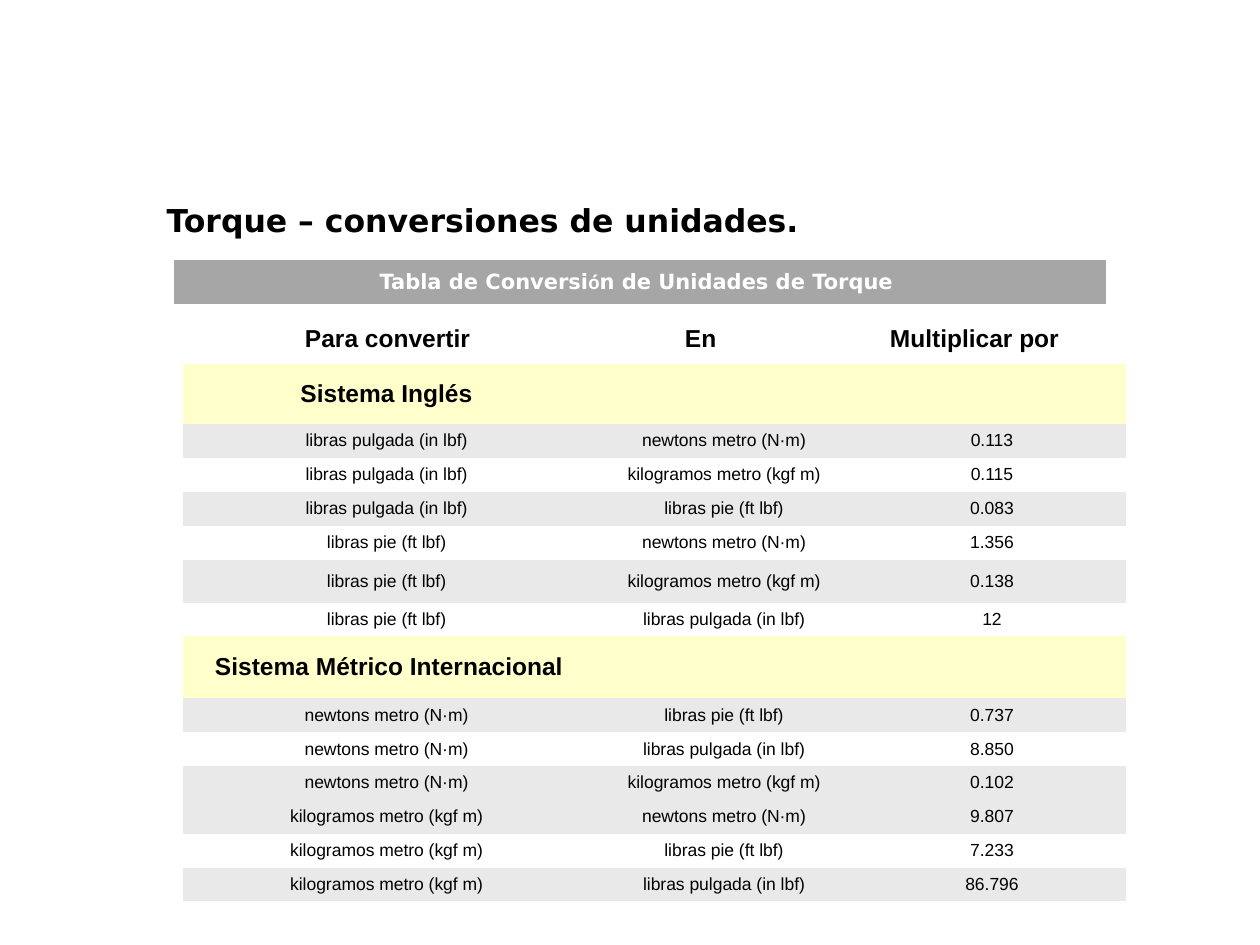
from pptx import Presentation
from pptx.dml.color import RGBColor
from pptx.enum.text import MSO_ANCHOR, MSO_AUTO_SIZE, PP_ALIGN
from pptx.util import Pt

PX = 914400 // 126
BLACK = RGBColor(0x00, 0x00, 0x00)
WHITE = RGBColor(0xFF, 0xFF, 0xFF)
GREY = RGBColor(0xA6, 0xA6, 0xA6)
LIGHT = RGBColor(0xE9, 0xE9, 0xE9)
YELLOW = RGBColor(0xFF, 0xFF, 0xCC)
PLAIN_STYLE = "{2D5ABB26-0587-4C30-8999-92F81FD0307C}"

IN_LBF = "libras pulgada (in lbf)"
FT_LBF = "libras pie (ft lbf)"
NM = "newtons metro (N·m)"
KGF_M = "kilogramos metro (kgf m)"

HEADINGS = [("Para convertir", 122), ("En", 95), ("Multiplicar por", 32)]
ENGLISH = [
    (IN_LBF, NM, "0.113", LIGHT),
    (IN_LBF, KGF_M, "0.115", None),
    (IN_LBF, FT_LBF, "0.083", LIGHT),
    (FT_LBF, NM, "1.356", None),
    (FT_LBF, KGF_M, "0.138", LIGHT),
    (FT_LBF, IN_LBF, "12", None),
]
METRIC = [
    (NM, FT_LBF, "0.737", LIGHT),
    (NM, IN_LBF, "8.850", None),
    (NM, KGF_M, "0.102", LIGHT),
    (KGF_M, NM, "9.807", LIGHT),
    (KGF_M, FT_LBF, "7.233", None),
    (KGF_M, IN_LBF, "86.796", LIGHT),
]
COLUMNS = [407, 268, 268]
ROWS = [50, 60, 34, 33, 34, 34, 43, 33, 62, 34, 34, 33, 34, 34, 33]


def set_font(p, name, size, color, bold):
    p.font.name = name
    p.font.size = Pt(size)
    p.font.color.rgb = color
    p.font.bold = bold


def fill_cell(cell, color):
    cell.vertical_anchor = MSO_ANCHOR.MIDDLE
    if color is None:
        cell.fill.background()
    else:
        cell.fill.solid()
        cell.fill.fore_color.rgb = color


def write_cell(cell, text, size, bold, indent=None):
    p = cell.text_frame.paragraphs[0]
    p.text = text
    set_font(p, "Arial", size, BLACK, bold)
    if indent is None:
        p.alignment = PP_ALIGN.CENTER
    else:
        p.alignment = PP_ALIGN.LEFT
        cell.margin_left = indent * PX


def add_plain_table(s, x, y, columns, rows):
    frame = s.shapes.add_table(len(rows), len(columns), x * PX, y * PX,
                               sum(columns) * PX, sum(rows) * PX)
    table = frame.table
    table.first_row = False
    table.horz_banding = False
    table._tbl.tblPr.find("{*}tableStyleId").text = PLAIN_STYLE
    for column, width in zip(table.columns, columns):
        column.width = width * PX
    for row, height in zip(table.rows, rows):
        row.height = height * PX
    return table


def add_title(s, x, y, w, h):
    title = s.shapes.title
    title.left, title.top, title.width, title.height = (v * PX for v in (x, y, w, h))
    tf = title.text_frame
    tf.word_wrap = True
    tf.auto_size = MSO_AUTO_SIZE.SHAPE_TO_FIT_TEXT
    tf.vertical_anchor = MSO_ANCHOR.TOP
    p = tf.paragraphs[0]
    p.text = "Torque – conversiones de unidades."
    p.alignment = PP_ALIGN.LEFT
    set_font(p, "DejaVu Sans", 18, BLACK, True)


def add_banner(s, x, y, w, h):
    cell = add_plain_table(s, x, y, [w], [h]).cell(0, 0)
    fill_cell(cell, GREY)
    p = cell.text_frame.paragraphs[0]
    p.alignment = PP_ALIGN.CENTER
    for text, font in [("Tabla de Conversi", "DejaVu Sans"), ("ó", "Calibri"),
                       ("n de Unidades de Torque ", "DejaVu Sans")]:
        r = p.add_run()
        r.text = text
        set_font(r, font, 12, WHITE, True)


def add_section(table, top, name, conversions, indent=None):
    for column in range(len(COLUMNS)):
        fill_cell(table.cell(top, column), YELLOW)
    write_cell(table.cell(top, 0), name, 14, True, indent)
    for row, (*values, color) in enumerate(conversions, top + 1):
        for column, value in enumerate(values):
            cell = table.cell(row, column)
            fill_cell(cell, color)
            write_cell(cell, value, 10, False)


def add_conversions(s, x, y):
    table = add_plain_table(s, x, y, COLUMNS, ROWS)
    for column, (heading, indent) in enumerate(HEADINGS):
        cell = table.cell(0, column)
        fill_cell(cell, None)
        write_cell(cell, heading, 14, True, indent)
    add_section(table, 1, "Sistema Inglés", ENGLISH)
    add_section(table, 2 + len(ENGLISH), "Sistema Métrico Internacional", METRIC, 32)


def main():
    prs = Presentation()
    prs.slide_width = 1260 * PX
    prs.slide_height = 945 * PX
    s = prs.slides.add_slide(prs.slide_layouts[5])
    add_banner(s, 174, 260, 932, 44)
    add_conversions(s, 183, 314)
    add_title(s, 154, 195, 824, 50)
    prs.save("out.pptx")


if __name__ == "__main__":
    main()
